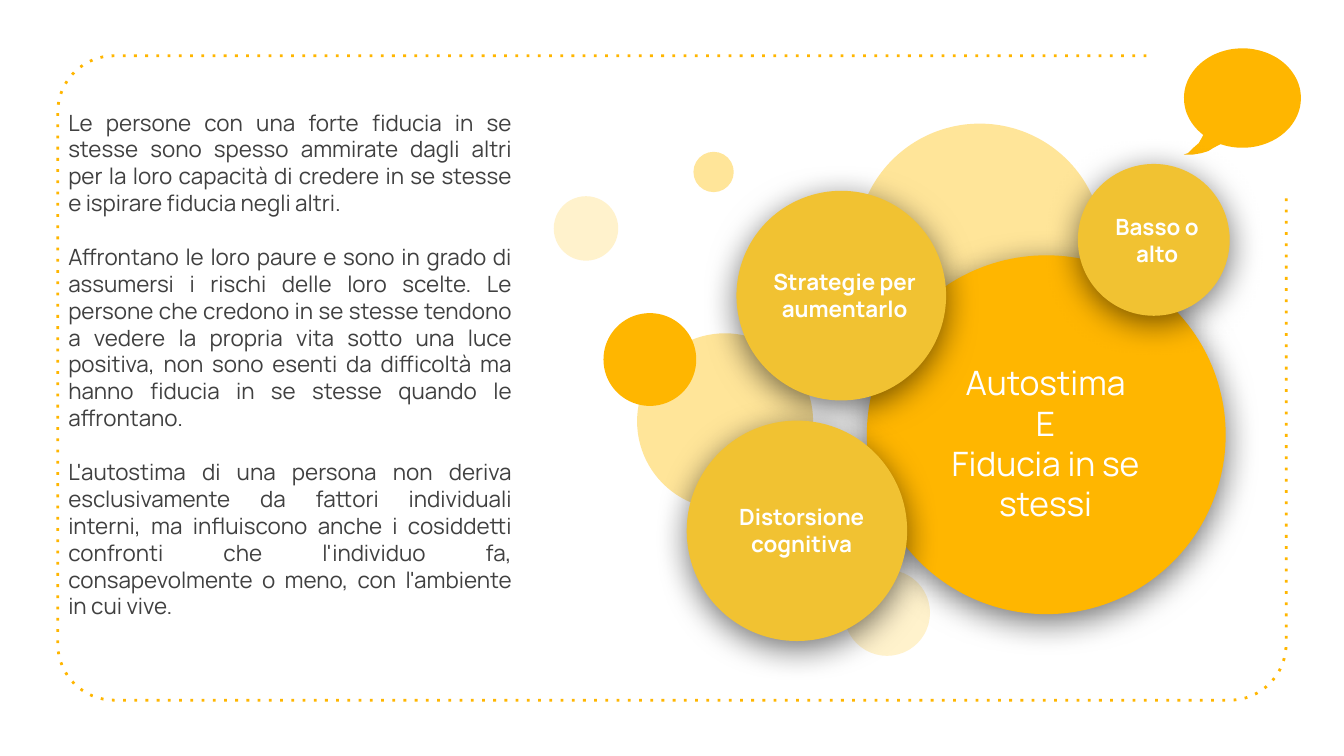
import math

from lxml import etree
from pptx import Presentation
from pptx.dml.color import RGBColor
from pptx.enum.shapes import MSO_SHAPE
from pptx.enum.text import MSO_ANCHOR, PP_ALIGN
from pptx.oxml.ns import qn
from pptx.util import Inches, Pt

OVAL, RECT = MSO_SHAPE.OVAL, MSO_SHAPE.RECTANGLE
CENTER, JUSTIFY = PP_ALIGN.CENTER, PP_ALIGN.JUSTIFY
TOP, MIDDLE = MSO_ANCHOR.TOP, MSO_ANCHOR.MIDDLE
AMBER, GOLD, SAND, CREAM = "FFB600", "F1C232", "FFE599", "FFF2CC"

prs = Presentation()
prs.slide_width = Inches(10)
prs.slide_height = prs.slide_width * 9 // 16
s = prs.slides.add_slide(prs.slide_layouts[6])
U = prs.slide_width / 100  # the slide is a grid of 100 square columns


def arc(cx, cy, rx, ry, start, end, steps):
    """Points on an ellipse, angles in degrees clockwise from the right."""
    angles = [math.radians(start + (end - start) * i / steps) for i in range(steps + 1)]
    return [(cx + rx * math.cos(a), cy + ry * math.sin(a)) for a in angles]


def add_text(text, x, y, w, h, size=12, color="FFFFFF", bold=False, align=CENTER,
             anchor=MIDDLE, inset=1, gap=0, fill=None):
    box = [round(v * U) for v in (x, y, w, h)]
    if fill:
        sp = s.shapes.add_shape(RECT, *box)
        sp.shadow.inherit = False
        sp.fill.solid()
        sp.fill.fore_color.rgb = RGBColor.from_string(fill)
        sp.line.fill.background()
    else:
        sp = s.shapes.add_textbox(*box)
    tf = sp.text_frame
    tf.word_wrap = True
    tf.vertical_anchor = anchor
    tf.margin_left = tf.margin_right = round(U)
    tf.margin_top = tf.margin_bottom = round(inset * U)
    for i, line in enumerate(text.split("\n")):
        p = tf.paragraphs[0] if i == 0 else tf.add_paragraph()
        p.alignment = align
        p.space_before = Pt(gap if i else 0)
        r = p.add_run()
        r.text = line
        r.font.name, r.font.size, r.font.bold = "Manrope", Pt(size), bold
        r.font.color.rgb = RGBColor.from_string(color)


# Outlines: dotted frame with an open corner, and the speech bubble in that corner
frame = [(85.3, 4.15)]
for cx, cy, start in [(8.5, 8.35, 270), (8.5, 47.9, 180), (91.5, 47.9, 90)]:
    frame += arc(cx, cy, 4.2, 4.2, start, start - 90, 16)
frame.append((95.7, 14.6))
bubble = arc(92.45, 7.3, 4.35, 3.7, 132, 472, 90)
bubble += [(90.3, 11), (89.9, 11.25), (89.4, 11.4), (88.8, 11.5), (88.1, 11.5),
           (88.4, 11.4), (88.8, 11), (89.2, 10.65), (89.4, 10.3)]

for points, closed in [(frame, False), (bubble, True)]:
    (x, y), *rest = [(round(px * U), round(py * U)) for px, py in points]
    builder = s.shapes.build_freeform(x, y)
    builder.add_line_segments(rest, close=closed)
    sp = builder.convert_to_shape()
    sp.shadow.inherit = False
    if closed:
        sp.fill.solid()
        sp.fill.fore_color.rgb = RGBColor.from_string(AMBER)
        sp.line.fill.background()
    else:
        sp.fill.background()
        sp.line.color.rgb = RGBColor.from_string(AMBER)
        sp.line.width = Pt(1.5)
        etree.SubElement(sp._element.spPr.find(qn("a:ln")), qn("a:prstDash"), val="dot")

# Circles from back to front: left, top, diameter, colour, label and its box
circles = [
    (62.8, 42.4, 6.4, CREAM, None, None),
    (41.2, 14.6, 4.8, CREAM, None, None),
    (47.4, 24.8, 13.1, SAND, None, None),
    (63.7, 9.2, 18.4, SAND, None, None),
    (44.9, 23.3, 6.9, AMBER, None, None),
    (51.6, 11.3, 3, SAND, None, None),
    (64.5, 19, 26.7, AMBER, "Autostima\nE\nFiducia in se stessi", (67.6, 26.6, 20.4, 12.7)),
    (54.8, 14.2, 15.6, GOLD, "Strategie per aumentarlo", (55.3, 16.8, 15.1, 10.3)),
    (51.1, 31.3, 16.4, GOLD, "Distorsione cognitiva", (52.5, 34.3, 14.3, 10.3)),
    (80.2, 12.2, 11.3, GOLD, "Basso o alto", (81.8, 13.4, 8.6, 8.9)),
]
for x, y, d, color, label, box in circles:
    sp = s.shapes.add_shape(OVAL, *[round(v * U) for v in (x, y, d, d)])
    sp.shadow.inherit = False
    sp.fill.solid()
    sp.fill.fore_color.rgb = RGBColor.from_string(color)
    sp.line.fill.background()
    if label:
        effects = sp._element.spPr.find(qn("a:effectLst"))
        shadow = etree.SubElement(effects, qn("a:outerShdw"), blurRad=str(Pt(18)),
                                  dist=str(Pt(4)), dir="5400000", algn="bl", rotWithShape="0")
        black = etree.SubElement(shadow, qn("a:srgbClr"), val="000000")
        etree.SubElement(black, qn("a:alpha"), val="54000")
        if color == AMBER:
            add_text(label, *box, size=18, fill=AMBER)
        else:
            add_text(label, *box, bold=True)

body = "\n".join([
    "Le persone con una forte fiducia in se stesse sono spesso ammirate dagli altri per la loro "
    "capacità di credere in se stesse e ispirare fiducia negli altri.",
    "Affrontano le loro paure e sono in grado di assumersi i rischi delle loro scelte. Le persone "
    "che credono in se stesse tendono a vedere la propria vita sotto una luce positiva, non sono "
    "esenti da difficoltà ma hanno fiducia in se stesse quando le affrontano.",
    "L'autostima di una persona non deriva esclusivamente da fattori individuali interni, ma "
    "influiscono anche i cosiddetti confronti che l'individuo fa, consapevolmente o meno, con "
    "l'ambiente in cui vive.",
])
add_text(body, 4.1, 7.6, 35, 37.4, color="404040", align=JUSTIFY, anchor=TOP, inset=0.5, gap=14.4)

prs.save("out.pptx")
